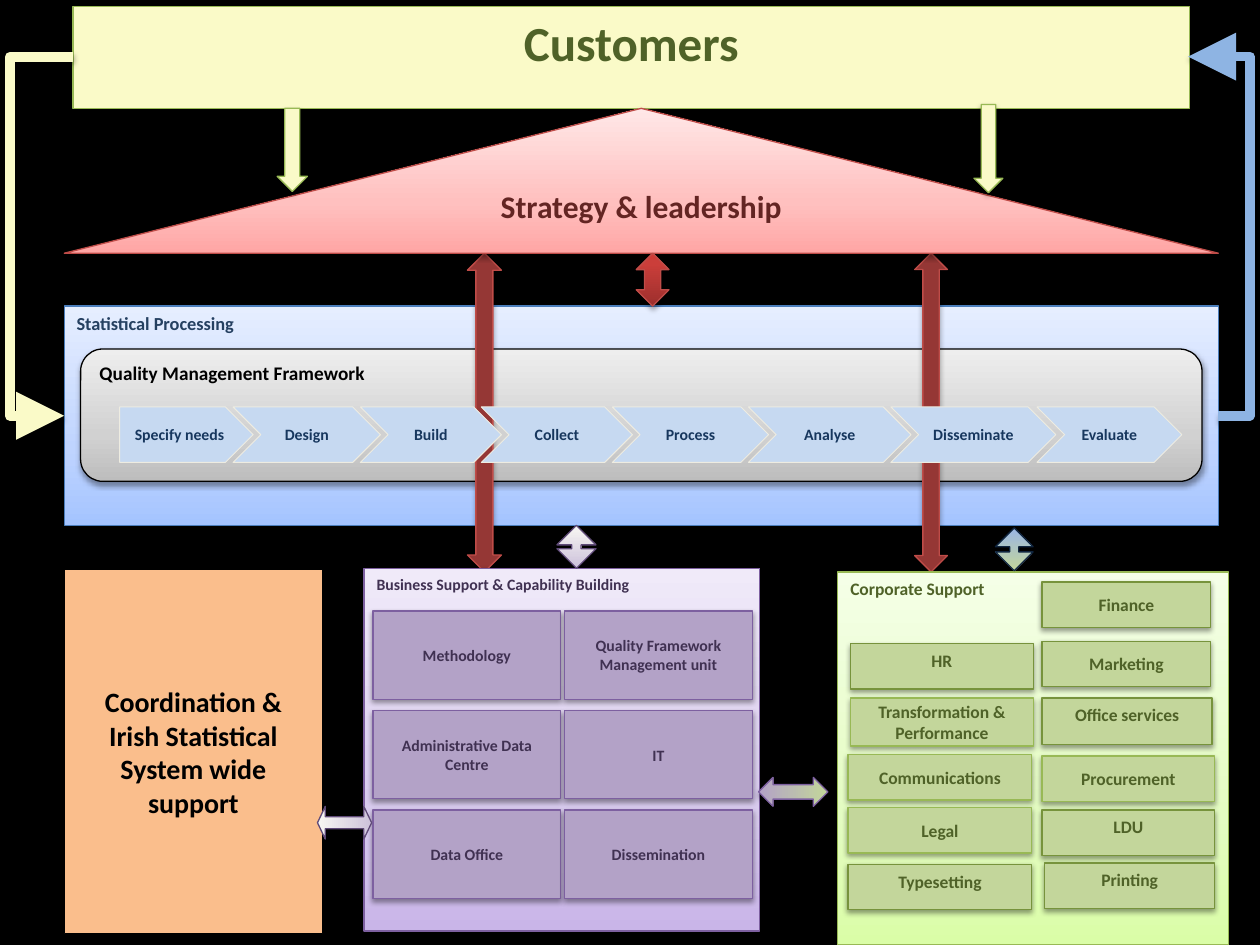
from pptx import Presentation
from pptx import util as u
from pptx.dml import color
from pptx.enum import shapes, text
from pptx.oxml import parse_xml
from pptx.oxml import ns

MSO = shapes.MSO_SHAPE
TOP, MIDDLE = text.MSO_ANCHOR.TOP, text.MSO_ANCHOR.MIDDLE
LEFT, CENTER = text.PP_ALIGN.LEFT, text.PP_ALIGN.CENTER
UP, DOWN, ACROSS = 90, 270, 0
BOX_SHADOW, ARROW_SHADOW = (38, 1.6), (35, 1.8)
CREAM, RED, PURPLE, GREEN, OLIVE = "FAFAC8", "BF4C48", "7D60A0", "98B955", "77933C"
THIN_HEAD = (0.369, 0.239)

STEPS = [
    ("Specify needs", 0.95, 1.06), ("Design", 1.85, 1.17),
    ("Build", 2.86, 1.12), ("Collect", 3.82, 1.2),
    ("Process", 4.86, 1.24), ("Analyse", 5.94, 1.29),
    ("Disseminate", 7.07, 1.31), ("Evaluate", 8.23, 1.15),
]
BUSINESS_UNITS = [
    ("Methodology", "Quality Framework Management unit"),
    ("Administrative Data Centre", "IT"),
    ("Data Office", "Dissemination"),
]
CORPORATE_UNITS = [
    ("HR", 6.75, 5.11, 1.45, 0.36, OLIVE, TOP),
    ("Transformation & Performance", 6.75, 5.54, 1.45, 0.38, GREEN, MIDDLE),
    ("Communications", 6.73, 5.99, 1.46, 0.36, GREEN, MIDDLE),
    ("Legal", 6.73, 6.41, 1.46, 0.36, GREEN, MIDDLE),
    ("Typesetting", 6.73, 6.86, 1.46, 0.36, OLIVE, TOP),
    ("Finance", 8.27, 4.62, 1.34, 0.36, OLIVE, MIDDLE),
    ("Marketing", 8.27, 5.09, 1.34, 0.36, OLIVE, MIDDLE),
    ("Office services", 8.27, 5.54, 1.35, 0.37, OLIVE, TOP),
    ("Procurement", 8.27, 6, 1.37, 0.36, GREEN, MIDDLE),
    ("LDU", 8.27, 6.43, 1.37, 0.36, OLIVE, TOP),
    ("Printing", 8.29, 6.85, 1.35, 0.36, OLIVE, TOP),
]


def rgb(value):
    """Turn a hex string into a colour."""
    return color.RGBColor.from_string(value)


def xml(body):
    """Parse a drawing element written with the a: prefix."""
    tag, rest = body.split(" ", 1)
    return parse_xml(f"{tag} {ns.nsdecls('a')} {rest}")


def shadow_effect(shadow):
    """Return the soft black shadow that falls straight down."""
    alpha, dist = shadow
    return xml(f'<a:outerShdw blurRad="{u.Pt(3.1)}" dist="{u.Pt(dist)}" dir="5400000" rotWithShape="0">'
               f'<a:srgbClr val="000000"><a:alpha val="{alpha * 1000}"/></a:srgbClr></a:outerShdw>')


def paint(sp, fill, line, width=0.75, shadow=None):
    """Set fill (hex, or stops with an angle), outline and shadow."""
    if isinstance(fill, str):
        sp.fill.solid()
        sp.fill.fore_color.rgb = rgb(fill)
    else:
        stops, angle = fill
        sp.fill.gradient()
        sp.fill.gradient_angle = angle
        gs_list = sp._element.spPr.find(".//" + ns.qn("a:gsLst"))
        for old in list(gs_list):
            gs_list.remove(old)
        for pos, value in stops:
            gs_list.append(xml(f'<a:gs pos="{pos * 1000}"><a:srgbClr val="{value}"/></a:gs>'))
    sp.line.color.rgb = rgb(line)
    sp.line.width = u.Pt(width)
    sp.shadow.inherit = False
    if shadow:
        effects = sp._element.spPr.find(ns.qn("a:effectLst"))
        effects.append(shadow_effect(shadow))


def write(sp, words, size, ink, align=CENTER, anchor=MIDDLE, inset=(0.1, 0.05)):
    """Put one bold paragraph into a shape."""
    tf = sp.text_frame
    tf.word_wrap = True
    tf.auto_size = text.MSO_AUTO_SIZE.NONE
    tf.vertical_anchor = anchor
    tf.margin_left = tf.margin_right = u.Inches(inset[0])
    tf.margin_top = tf.margin_bottom = u.Inches(inset[1])
    p = tf.paragraphs[0]
    p.text = words
    p.alignment = align
    p.font.name = "Calibri"
    p.font.size = u.Pt(size)
    p.font.bold = True
    p.font.color.rgb = rgb(ink)


def add_box(s, kind, at, fill, line, width=0.75, shadow=BOX_SHADOW):
    """Add a painted preset shape."""
    sp = s.shapes.add_shape(kind, *map(u.Inches, at))
    paint(sp, fill, line, width, shadow)
    return sp


def add_panel(s, kind, at, stops, line, words, size, ink):
    """Add a gradient panel with its heading at the top left."""
    sp = add_box(s, kind, at, (list(zip((0, 35, 100), stops)), UP), line)
    write(sp, words, size, ink, LEFT, TOP)


def add_arrow(s, kind, at, fill, line, shadow=ARROW_SHADOW, adjust=()):
    """Add a block arrow."""
    sp = add_box(s, kind, at, fill, line, shadow=shadow)
    for i, value in enumerate(adjust):
        sp.adjustments[i] = value


def add_loop(s, start, end, ink, bend):
    """Add a thick elbow connector with a large arrowhead."""
    cx = s.shapes.add_connector(shapes.MSO_CONNECTOR.ELBOW, *map(u.Inches, start + end))
    cx.line.color.rgb = rgb(ink)
    cx.line.width = u.Pt(5.5)
    cx.line._get_or_add_ln().append(xml('<a:tailEnd type="triangle" w="lg" len="lg"/>'))
    sp_pr = cx._element.spPr
    guides = sp_pr.find(".//" + ns.qn("a:avLst"))
    guides.append(xml(f'<a:gd name="adj1" fmla="val {round(bend * 100000)}"/>'))
    effects = xml("<a:effectLst />")
    effects.append(shadow_effect(ARROW_SHADOW))
    sp_pr.append(effects)


def add_banner(s):
    """Turn the title placeholder into the customer banner."""
    sp = s.shapes.title
    sp.left, sp.top, sp.width, sp.height = map(u.Inches, (0.58, 0.05, 8.86, 0.81))
    paint(sp, CREAM, GREEN, shadow=BOX_SHADOW)
    write(sp, "Customers", 28, "4F6228", anchor=TOP)


def add_processing(s):
    """Add the processing panels, the strategy roof and the process steps."""
    add_panel(s, MSO.RECTANGLE, (0.51, 2.43, 9.16, 1.74), ("A4C4FF", "BFD4FF", "E6EEFF"),
              "4B7EBC", "Statistical Processing", 10.5, "254061")
    add_panel(s, MSO.ROUNDED_RECTANGLE, (0.64, 2.77, 8.9, 1.05), ("BDBDBD", "D1D1D1", "EEEEEE"),
              "000000", "Quality Management Framework", 11, "000000")
    for left, width in ((3.71, 0.27), (7.26, 0.26)):
        add_arrow(s, MSO.UP_DOWN_ARROW, (left, 2.01, width, 2.53), "953735", RED)
    roof = add_box(s, MSO.ISOSCELES_TRIANGLE, (0.51, 0.86, 9.16, 1.15),
                   ([(0, "FFA6A5"), (35, "FFC0BF"), (100, "FFE7E7")], UP), RED)
    write(roof, "Strategy & leadership", 18, "632523", anchor=TOP)
    add_arrow(s, MSO.UP_DOWN_ARROW, (5.05, 2.01, 0.26, 0.42),
              ([(0, "9C2F2D"), (80, "CB3E3A"), (100, "CE3B37")], UP), RED)
    for i, (words, left, width) in enumerate(STEPS):
        kind = MSO.CHEVRON if i else MSO.PENTAGON
        sp = add_box(s, kind, (left, 3.23, width, 0.44), "C6D9F1", "EEECE1", 0.5, None)
        write(sp, words, 9, "17375E", inset=(0, 0.05))


def add_support(s):
    """Add the three support panels and their units."""
    add_panel(s, MSO.RECTANGLE, (2.89, 4.51, 3.14, 2.88), ("C9B5E8", "D8CBEE", "F0EAF9"),
              PURPLE, "Business Support & Capability Building", 9, "403152")
    for row, units in enumerate(BUSINESS_UNITS):
        for col, words in enumerate(units):
            at = (2.96 + 1.52 * col, 4.85 + 0.79 * row, 1.49, 0.7)
            write(add_box(s, MSO.RECTANGLE, at, "B3A2C7", PURPLE), words, 9, "403152")
    sp = add_box(s, MSO.RECTANGLE, (0.51, 4.52, 2.05, 2.89), "FABE8C", "000000")
    write(sp, "Coordination & Irish Statistical System wide support", 16, "000000", inset=(0.2, 0.05))
    add_panel(s, MSO.RECTANGLE, (6.65, 4.54, 3.1, 2.96), ("DAFDA7", "E4FCC2", "F5FFE7"),
              GREEN, "Corporate Support", 10, "4F6228")
    for words, left, top, width, height, line, anchor in CORPORATE_UNITS:
        sp = add_box(s, MSO.RECTANGLE, (left, top, width, height), "C3D69B", line)
        write(sp, words, 10, "4F6228", anchor=anchor)


def add_links(s):
    """Add the arrows that join customers, processing and support."""
    lilac = [(0, "F8F7F3"), (100, "CCC1DA")]
    for at in ((2.2, 0.86, 0.24, 0.66), (7.73, 0.83, 0.23, 0.7)):
        add_arrow(s, MSO.DOWN_ARROW, at, CREAM, GREEN)
    add_arrow(s, MSO.LEFT_RIGHT_ARROW, (6.02, 6.17, 0.55, 0.23),
              ([(0, "7B57A7"), (0, "B3A2C7"), (100, "C3D69B")], ACROSS), PURPLE)
    add_arrow(s, MSO.LEFT_RIGHT_ARROW, (2.52, 6.4, 0.43, 0.26), (lilac, ACROSS), "5F4A78", None, THIN_HEAD)
    add_arrow(s, MSO.UP_DOWN_ARROW, (4.42, 4.17, 0.31, 0.34), (lilac, DOWN), "5F4A78", None, THIN_HEAD)
    add_arrow(s, MSO.UP_DOWN_ARROW, (7.9, 4.19, 0.3, 0.34),
              ([(0, "9AB5E4"), (100, "C3D69B")], DOWN), "0F243E", None, THIN_HEAD)
    add_loop(s, (9.67, 3.3), (9.43, 0.45), "8EB4E3", -1.04)
    add_loop(s, (0.58, 0.45), (0.51, 3.3), CREAM, 7.16)


def main():
    """Build and save the slide."""
    prs = Presentation()
    prs.slide_width, prs.slide_height = u.Inches(10), u.Inches(7.5)
    s = prs.slides.add_slide(prs.slide_layouts[5])
    s.background.fill.solid()
    s.background.fill.fore_color.rgb = rgb("000000")
    add_banner(s)
    add_processing(s)
    add_support(s)
    add_links(s)
    prs.save("out.pptx")


if __name__ == "__main__":
    main()
